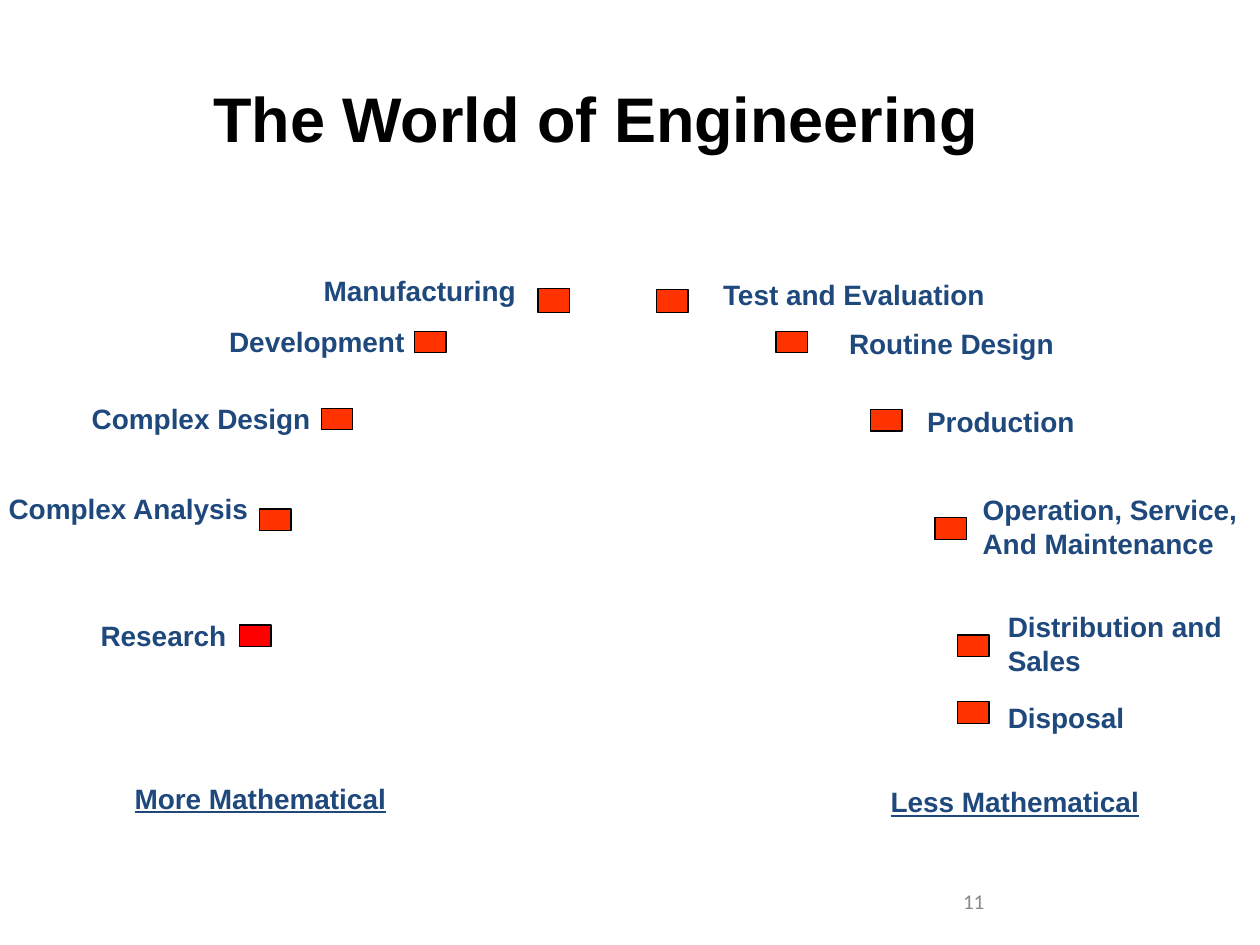
import pptx
import pptx.util
import pptx.dml.color
import pptx.enum.shapes
import pptx.enum.text

Inches = pptx.util.Inches
RGBColor = pptx.dml.color.RGBColor
Align = pptx.enum.text.PP_ALIGN
Anchor = pptx.enum.text.MSO_ANCHOR

BLACK = RGBColor(0x00, 0x00, 0x00)
NAVY = RGBColor(0x1F, 0x49, 0x7D)
RED = RGBColor(0xFF, 0x00, 0x00)
ORANGE = RGBColor(0xFF, 0x33, 0x00)
GREY = RGBColor(0x89, 0x89, 0x89)

LINE_H = 0.37
PAIR_H = 0.64
MARK_W = 0.25
MARK_H = 0.17

# Label, its left, top, width, height, wrap; then marker left, top, height, fill.
# Lengths are in inches from the corner of the branch.
LEFT = [
    ("Manufacturing", 2.47, 0.12, 1.93, LINE_H, True, 4.27, 0.29, 0.19, ORANGE),
    ("Development", 1.72, 0.53, 1.75, LINE_H, True, 3.29, 0.63, MARK_H, ORANGE),
    ("Complex Design", 0.63, 1.14, 1.94, LINE_H, False, 2.55, 1.24, MARK_H, ORANGE),
    ("Complex Analysis", -0.03, 1.85, 2.28, LINE_H, True, 2.06, 2.04, MARK_H, ORANGE),
    ("Research", 0.7, 2.86, 1.33, LINE_H, True, 1.9, 2.96, MARK_H, RED),
]
RIGHT = [
    ("Test and Evaluation", 0.64, 0.15, 2.53, LINE_H, True, 0.21, 0.3, 0.18, ORANGE),
    ("Routine Design", 1.64, 0.54, 1.83, LINE_H, False, 1.16, 0.63, MARK_H, ORANGE),
    ("Production", 2.26, 1.16, 1.92, LINE_H, True, 1.91, 1.25, MARK_H, ORANGE),
    ("Operation, Service,\nAnd Maintenance", 2.7, 1.86, 2.29, PAIR_H, False,
     2.42, 2.11, MARK_H, ORANGE),
    ("Distribution and Sales", 2.9, 2.79, 1.95, PAIR_H, True, 2.6, 3.04, MARK_H, ORANGE),
    ("Disposal", 2.9, 3.51, 1.95, LINE_H, True, 2.6, 3.57, MARK_H, ORANGE),
]


def add_text(slide, text, left, top, width, height, size=16, font="Arial",
             color=NAVY, bold=True, under=None, align=Align.LEFT,
             anchor=Anchor.TOP, wrap=True):
    box = slide.shapes.add_textbox(left, top, width, height)
    frame = box.text_frame
    frame.word_wrap = wrap
    frame.vertical_anchor = anchor
    frame.text = text
    for para in frame.paragraphs:
        para.alignment = align
        for run in para.runs:
            run.font.size = pptx.util.Pt(size)
            run.font.name = font
            run.font.bold = bold
            run.font.underline = under
            run.font.color.rgb = color


def add_mark(slide, left, top, height, fill):
    kind = pptx.enum.shapes.MSO_SHAPE.ACTION_BUTTON_CUSTOM
    mark = slide.shapes.add_shape(kind, left, top, Inches(MARK_W), height)
    mark.shadow.inherit = False
    mark.fill.solid()
    mark.fill.fore_color.rgb = fill
    mark.line.color.rgb = BLACK
    mark.line.width = pptx.util.Pt(0.75)


def add_branch(slide, left, top, stages):
    """Place each stage label and its marker from the branch's corner."""
    for text, x, y, width, height, wrap, mark_x, mark_y, mark_h, fill in stages:
        add_text(slide, text, left + Inches(x), top + Inches(y),
                 Inches(width), Inches(height), wrap=wrap)
        add_mark(slide, left + Inches(mark_x), top + Inches(mark_y),
                 Inches(mark_h), fill)


def add_title(slide, left, top, width, height):
    add_text(slide, "The World of Engineering", left, top, width, height,
             size=36, color=BLACK, align=Align.CENTER)


def add_scale(slide, left, top):
    """Name the two ends of the range below the branches."""
    add_text(slide, "More Mathematical", left, top,
             Inches(3), Inches(LINE_H), under=True)
    add_text(slide, "Less Mathematical", left + Inches(6), top + Inches(0.03),
             Inches(2.5), Inches(LINE_H), under=True)


def add_number(slide, left, top, width, height):
    add_text(slide, "11", left, top, width, height, size=12, font="Calibri",
             color=GREY, bold=False, align=Align.RIGHT, anchor=Anchor.MIDDLE)


def main():
    deck = pptx.Presentation()
    deck.slide_width = Inches(10)
    deck.slide_height = Inches(7.5)
    slide = deck.slides.add_slide(deck.slide_layouts[6])
    add_title(slide, Inches(1.11), Inches(0.58), Inches(7.24), Inches(0.71))
    add_branch(slide, Inches(0), Inches(2), LEFT)
    add_branch(slide, Inches(5), Inches(2), RIGHT)
    add_scale(slide, Inches(0.97), Inches(6.15))
    add_number(slide, Inches(6.83), Inches(6.95), Inches(1.08), Inches(0.4))
    deck.save("out.pptx")


if __name__ == "__main__":
    main()
